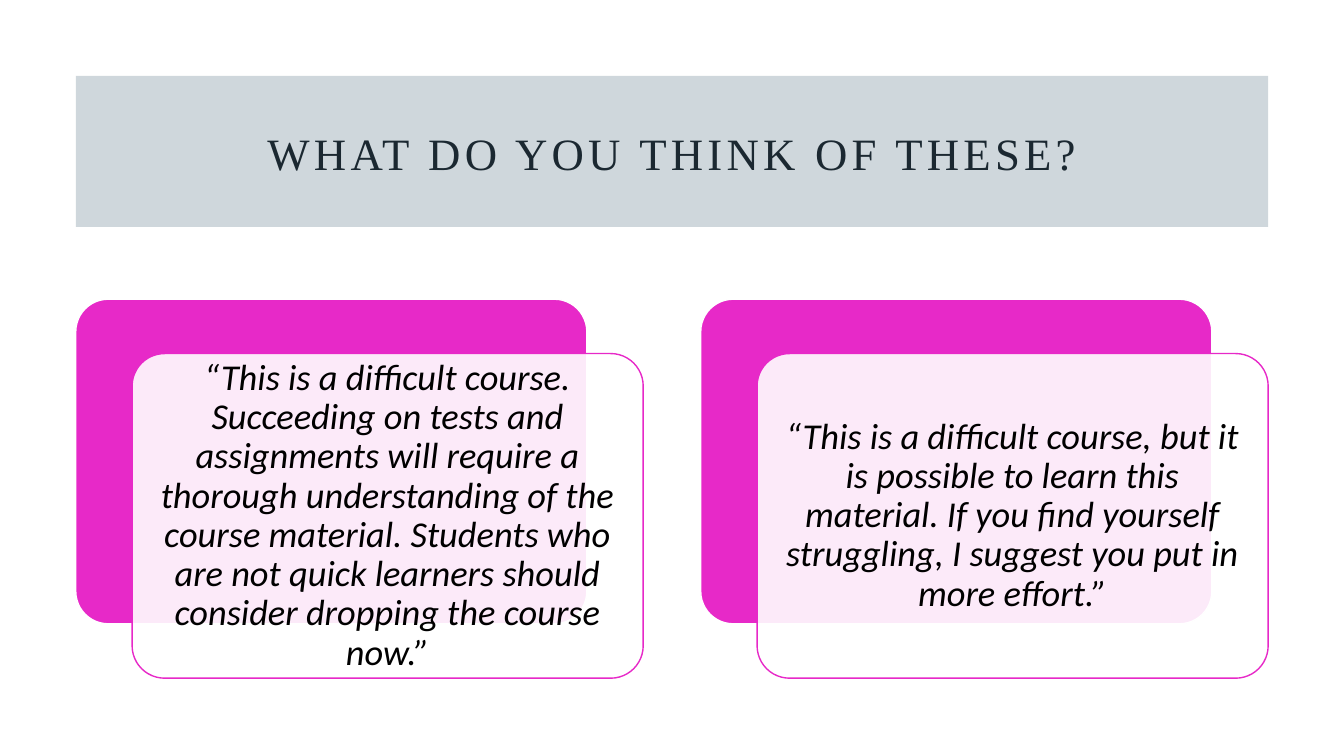
from dataclasses import dataclass

from lxml.etree import SubElement
from pptx import Presentation
from pptx.dml.color import RGBColor
from pptx.enum.shapes import MSO_SHAPE
from pptx.enum.text import MSO_ANCHOR, MSO_AUTO_SIZE, PP_ALIGN
from pptx.oxml.ns import qn
from pptx.util import Cm, Pt


@dataclass(frozen=True)
class Theme:
    """Colours, fonts and type sizes of the slide."""
    band: str = "426177"
    heading: str = "1B2831"
    accent: str = "E729C8"
    paper: str = "FFFFFF"
    ink: str = "000000"
    heading_font: str = "Times New Roman"
    quote_font: str = "Calibri"
    heading_size: int = 32
    quote_size: int = 26
    heading_spacing: int = 3
    line_spacing: float = 0.9
    outline: int = 1


def apply(target, values):
    """Set every attribute named in values on the target."""
    for name, value in values.items():
        setattr(target, name, value)


class QuoteSlide:
    """Draws the heading and quote cards on one slide."""

    def __init__(self, deck, theme):
        """Add a title-only page to the deck."""
        self.theme = theme
        self.page = deck.slides.add_slide(deck.slide_layouts[5])

    def panel(self, kind, box, fill, opacity=100, line=None):
        """Add a filled panel, optionally outlined and see-through."""
        shape = self.page.shapes.add_shape(kind, *map(Cm, box))
        shape.shadow.inherit = False
        shape.fill.solid()
        shape.fill.fore_color.rgb = RGBColor.from_string(fill)
        if opacity < 100:
            colour = shape.element.spPr.find(f"{qn('a:solidFill')}/{qn('a:srgbClr')}")
            SubElement(colour, qn("a:alpha"), val=str(opacity * 1000))
        if line:
            shape.line.color.rgb = RGBColor.from_string(line)
            shape.line.width = Pt(self.theme.outline)
        else:
            shape.line.fill.background()
        return shape

    def label(self, shape, text, colour, inset, font):
        """Put one centred paragraph into a shape."""
        frame = shape.text_frame
        apply(frame, {
            "word_wrap": True, "auto_size": MSO_AUTO_SIZE.NONE,
            "vertical_anchor": MSO_ANCHOR.MIDDLE,
            **{f"margin_{side}": Cm(inset) for side in ("left", "right", "top", "bottom")},
        })
        para = frame.paragraphs[0]
        apply(para, {"alignment": PP_ALIGN.CENTER, "line_spacing": self.theme.line_spacing})
        span = para.add_run()
        span.text = text
        apply(span.font, font)
        span.font.color.rgb = RGBColor.from_string(colour)

    def heading(self, text, box, band_box):
        """Place the title over its tinted band."""
        theme = self.theme
        title = self.page.shapes.title
        apply(title, dict(zip(("left", "top", "width", "height"), map(Cm, box))))
        band = self.panel(MSO_SHAPE.RECTANGLE, band_box, theme.band, opacity=25)
        title.element.addprevious(band.element)
        self.label(title, text, theme.heading, 0.25,
                   {"name": theme.heading_font, "size": Pt(theme.heading_size)})
        for properties in title.element.iter(qn("a:rPr")):
            properties.set("spc", str(theme.heading_spacing * 100))

    def card(self, text, left, top):
        """Add a quote on a translucent card over a solid one."""
        theme = self.theme
        width, height, shift_x, shift_y = 12.88, 8.18, 1.42, 1.37
        back = self.panel(MSO_SHAPE.ROUNDED_RECTANGLE, (left, top, width, height),
                          theme.accent, line=theme.paper)
        front = self.panel(MSO_SHAPE.ROUNDED_RECTANGLE,
                           (left + shift_x, top + shift_y, width, height),
                           theme.paper, opacity=90, line=theme.accent)
        for shape in (back, front):
            shape.adjustments[0] = 0.1
        self.label(front, text, theme.ink, 0.28,
                   {"name": theme.quote_font, "size": Pt(theme.quote_size), "italic": True})


def main():
    """Build and save the deck."""
    deck = Presentation()
    apply(deck, {"slide_width": Cm(33.87), "slide_height": Cm(19.05)})
    slide = QuoteSlide(deck, Theme())
    margin, pitch = 1.91, 15.75
    slide.heading("WHAT DO YOU THINK OF THESE?",
                  (3.89, 2.64, 26.09, 2.59), (margin, margin, 30.05, 3.81))
    quotes = (
        "“This is a difficult course. Succeeding on tests and assignments will require "
        "a thorough understanding of the course material. Students who are not quick "
        "learners should consider dropping the course now.”",
        "“This is a difficult course, but it is possible to learn this material. If you "
        "find yourself struggling, I suggest you put in more effort.”",
    )
    for column, quote in enumerate(quotes):
        slide.card(quote, margin + column * pitch, 7.54)
    deck.save("out.pptx")


if __name__ == "__main__":
    main()
